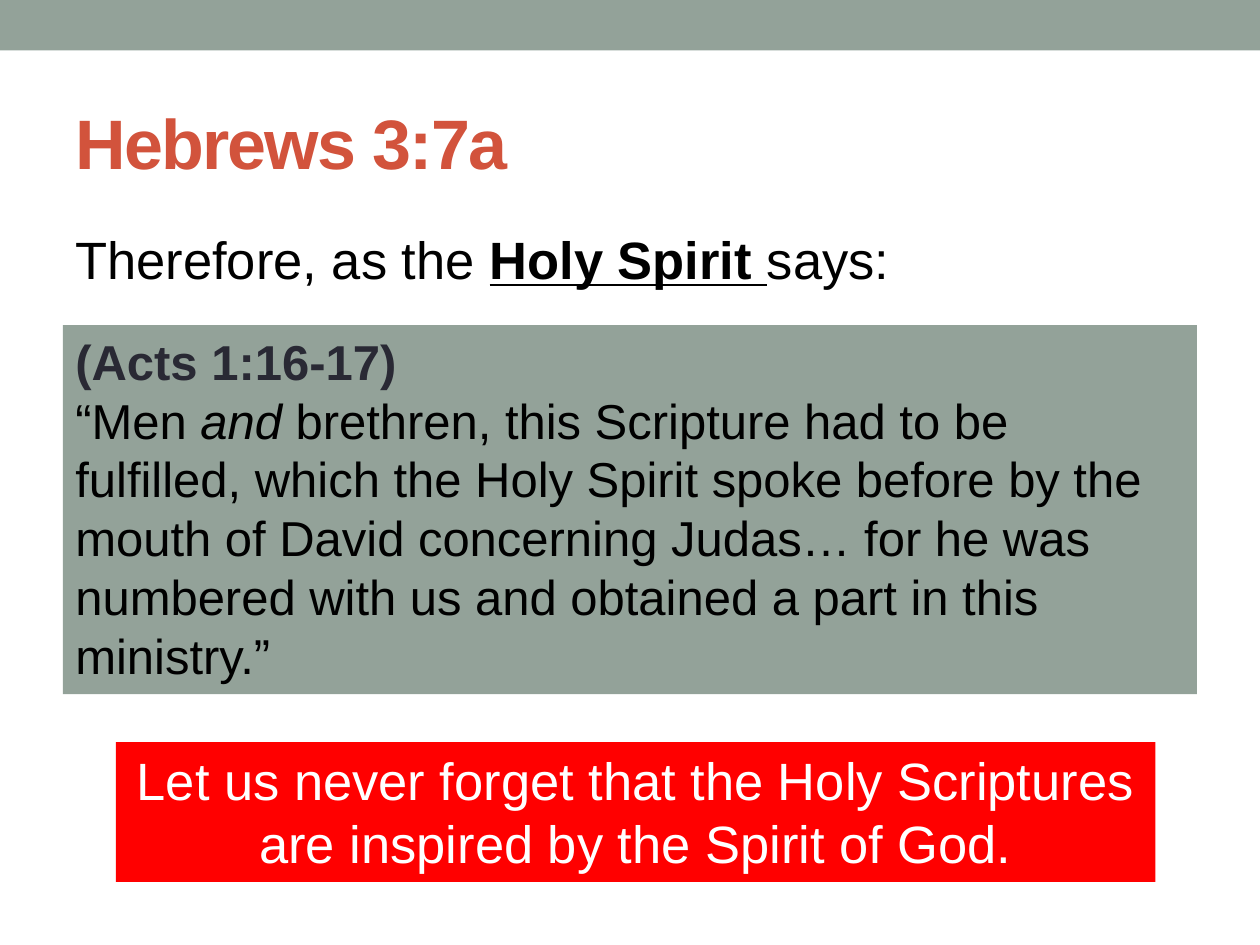
import pptx
import pptx.dml.color
import pptx.enum.shapes
import pptx.enum.text
import pptx.util
from pptx.util import Inches

SAGE, RED, RUST = "93A299", "FF0000", "D2533C"
BLACK, WHITE, SLATE = "000000", "FFFFFF", "292934"
LEFT, CENTER = pptx.enum.text.PP_ALIGN.LEFT, pptx.enum.text.PP_ALIGN.CENTER
TOP, MIDDLE = pptx.enum.text.MSO_ANCHOR.TOP, pptx.enum.text.MSO_ANCHOR.MIDDLE

BANNER = (0, 0, 10, 0.4)
TITLE = [([("Hebrews 3:7a", "")], RUST, True)]
VERSE = [([("Therefore, as the ", ""), ("Holy Spirit ", "bu"), ("says:", "")], BLACK, None)]
REMINDER = [([("Let us never forget that the Holy Scriptures are inspired by the Spirit of God.", "")],
             WHITE, None)]
PASSAGE = [
    ([("(Acts 1:16-17)", "")], SLATE, True),
    ([("“Men ", ""), ("and", "i"),
      (" brethren, this Scripture had to be fulfilled, which the Holy Spirit spoke before "
       "by the mouth of David concerning Judas… for he was numbered with us and obtained "
       "a part in this ministry.”", "")], BLACK, None),
]
BLOCKS = [
    ((0.5, 0.58, 9, 1.08), None, TITLE, 40, LEFT, MIDDLE, -1),
    ((0.5, 1.75, 9, 0.75), None, VERSE, 30, LEFT, TOP, 0),
    ((0.92, 5.89, 8.25, 1.11), RED, REMINDER, 30, CENTER, TOP, 0),
    ((0.5, 2.58, 9, 2.93), SAGE, PASSAGE, 28, LEFT, TOP, 0),
]


def rgb(value):
    return pptx.dml.color.RGBColor.from_string(value)


def add_panel(slide, box, fill):
    panel = slide.shapes.add_shape(pptx.enum.shapes.MSO_SHAPE.RECTANGLE, *map(Inches, box))
    panel.shadow.inherit = False
    panel.fill.solid()
    panel.fill.fore_color.rgb = rgb(fill)
    panel.line.fill.background()
    return panel


def write(frame, paragraphs, size, align, anchor, spacing):
    frame.word_wrap = True
    frame.vertical_anchor = anchor
    for index, (runs, color, bold) in enumerate(paragraphs):
        paragraph = frame.paragraphs[0] if index == 0 else frame.add_paragraph()
        paragraph.alignment = align
        paragraph.font.name = "Arial"
        paragraph.font.size = pptx.util.Pt(size)
        paragraph.font.color.rgb = rgb(color)
        paragraph.font.bold = bold
        for text, style in runs:
            run = paragraph.add_run()
            run.text = text
            if "b" in style:
                run.font.bold = True
            if "u" in style:
                run.font.underline = True
            if "i" in style:
                run.font.italic = True
            if spacing:
                run._r.get_or_add_rPr().set("spc", str(spacing * 100))


def main():
    deck = pptx.Presentation()
    deck.slide_width, deck.slide_height = Inches(10), Inches(7.5)
    slide = deck.slides.add_slide(deck.slide_layouts[6])
    add_panel(slide, BANNER, SAGE)
    for box, fill, paragraphs, size, align, anchor, spacing in BLOCKS:
        if fill:
            block = add_panel(slide, box, fill)
        else:
            block = slide.shapes.add_textbox(*map(Inches, box))
        write(block.text_frame, paragraphs, size, align, anchor, spacing)
    deck.save("out.pptx")


if __name__ == "__main__":
    main()
